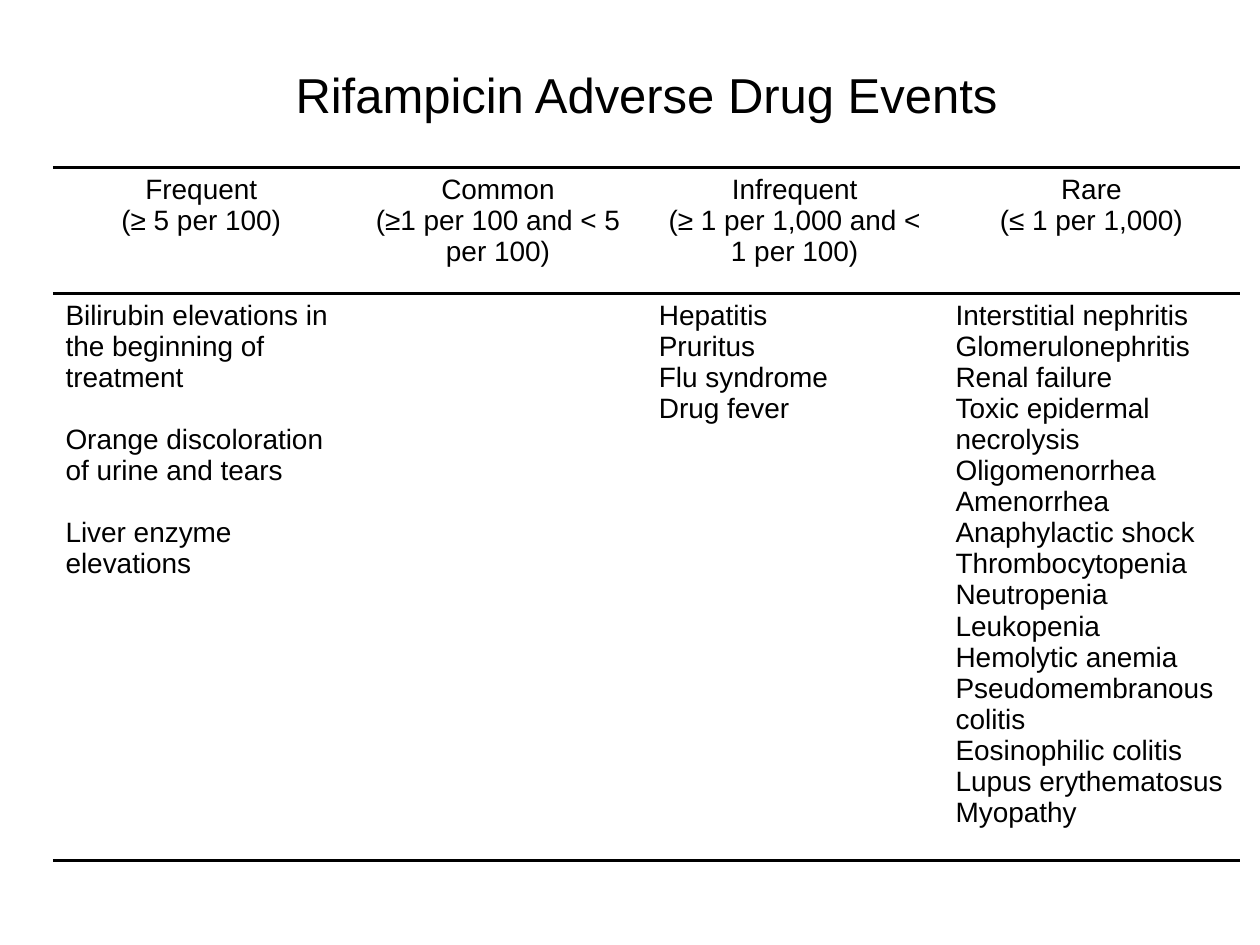
from lxml import etree
from pptx import Presentation
from pptx.dml.color import RGBColor
from pptx.enum.text import PP_ALIGN as Align
from pptx.oxml.ns import qn
from pptx.util import Inches, Pt

BLACK = RGBColor(0x00, 0x00, 0x00)
NO_STYLE = "{2D5ABB26-0587-4C30-8999-92F81FD0307C}"
TITLE = "Rifampicin Adverse Drug Events"
COLUMNS = [
    (["Frequent", "(≥ 5 per 100)"],
     ["Bilirubin elevations in the beginning of treatment",
      "Orange discoloration of urine and tears",
      "Liver enzyme elevations"], 17.8),
    (["Common", "(≥1 per 100 and < 5 per 100)"], [], 0),
    (["Infrequent", "(≥ 1 per 1,000 and < 1 per 100)"],
     ["Hepatitis", "Pruritus", "Flu syndrome", "Drug fever"], 0),
    (["Rare", "(≤ 1 per 1,000)"],
     ["Interstitial nephritis", "Glomerulonephritis", "Renal failure",
      "Toxic epidermal necrolysis", "Oligomenorrhea", "Amenorrhea",
      "Anaphylactic shock", "Thrombocytopenia", "Neutropenia", "Leukopenia",
      "Hemolytic anemia", "Pseudomembranous colitis", "Eosinophilic colitis",
      "Lupus erythematosus", "Myopathy"], 0),
]


class SlideBuilder:
    """Holds the text style and the current slide, and adds elements to it."""

    def __init__(self, slide, font="Arial", color=BLACK, rule_width=2.25):
        self.slide = slide
        self.font = font
        self.color = color
        self.rule_width = rule_width

    def add_table(self, left, top, column_width, column_count, row_heights):
        shape = self.slide.shapes.add_table(
            len(row_heights), column_count, Inches(left), Inches(top),
            Inches(column_width * column_count), Inches(sum(row_heights)))
        table = shape.table
        table.first_row = table.horz_banding = False
        next(table._tbl.iter(qn("a:tableStyleId"))).text = NO_STYLE
        for column in table.columns:
            column.width = Inches(column_width)
        for row, height in zip(table.rows, row_heights):
            row.height = Inches(height)
            for cell in row.cells:
                cell.fill.background()
                self.add_bottom_rule(cell)
        return table

    def add_bottom_rule(self, cell):
        properties = cell._tc.get_or_add_tcPr()
        line = etree.Element(qn("a:lnB"), w=str(Pt(self.rule_width)))
        fill = etree.SubElement(line, qn("a:solidFill"))
        etree.SubElement(fill, qn("a:srgbClr"), val=str(self.color))
        properties.insert(0, line)

    def add_text(self, cell, lines, size=16, align=Align.LEFT, gap=0):
        frame = cell.text_frame
        for index, line in enumerate(lines):
            paragraph = frame.add_paragraph() if index else frame.paragraphs[0]
            paragraph.alignment = align
            paragraph.space_before = Pt(gap if index else 0)
            run = paragraph.add_run()
            run.text = line
            run.font.name = self.font
            run.font.size = Pt(size)
            run.font.color.rgb = self.color


def main():
    presentation = Presentation()
    presentation.slide_width = Inches(10)
    presentation.slide_height = Inches(7.5)
    slide = presentation.slides.add_slide(presentation.slide_layouts[6])
    builder = SlideBuilder(slide)

    table = builder.add_table(0.42, 0.5, 2.355, len(COLUMNS), [0.83, 1, 4.5])
    title_cell = table.cell(0, 0)
    title_cell.merge(table.cell(0, len(COLUMNS) - 1))
    builder.add_text(title_cell, [TITLE], size=28, align=Align.CENTER)
    for index, (heading, events, gap) in enumerate(COLUMNS):
        builder.add_text(table.cell(1, index), heading, align=Align.CENTER)
        builder.add_text(table.cell(2, index), events, gap=gap)

    presentation.save("out.pptx")


if __name__ == "__main__":
    main()
